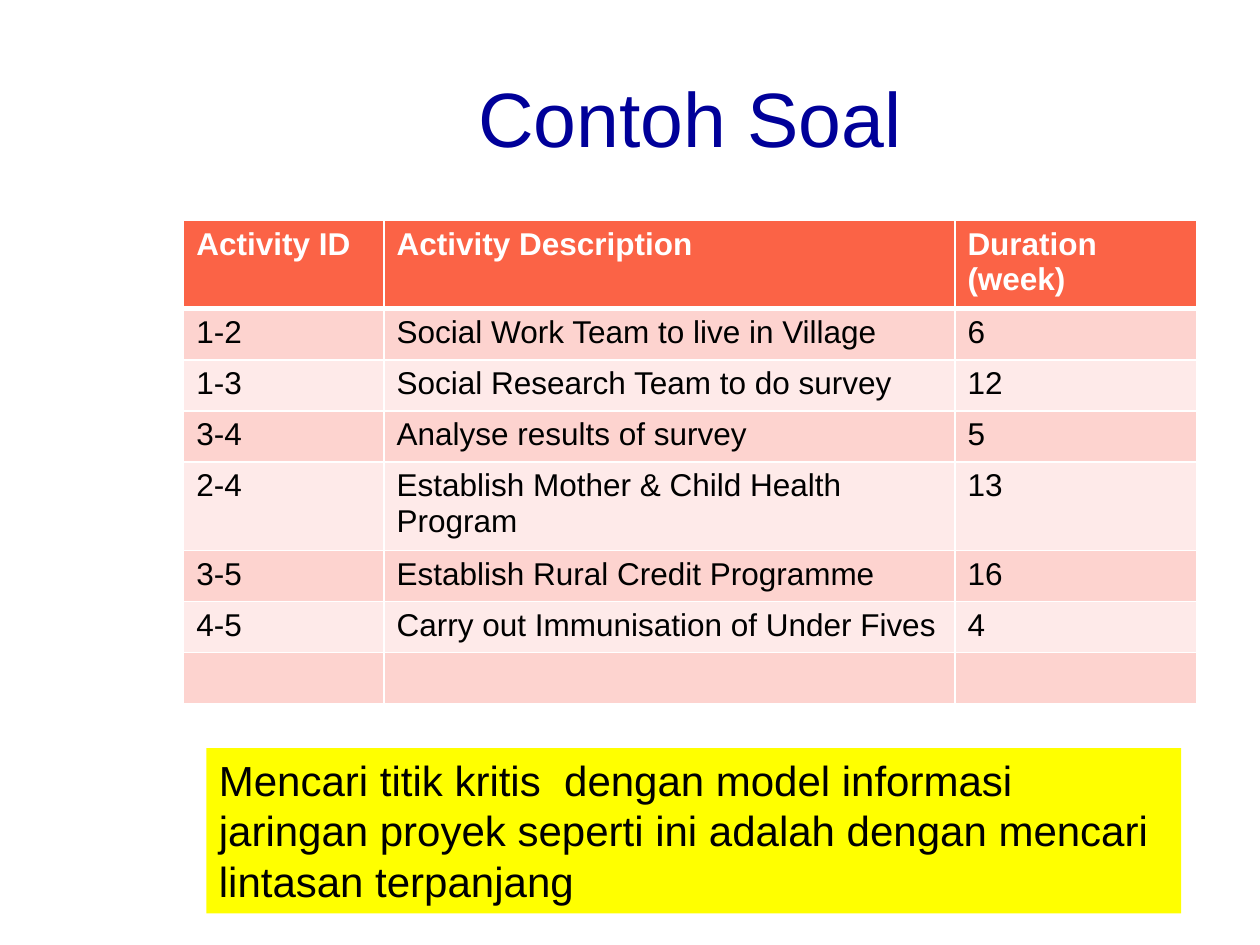
import pptx
import pptx.dml.color
import pptx.enum.shapes
import pptx.enum.text
import pptx.oxml
import pptx.oxml.ns
import pptx.util
from pptx.util import Pt

ACTIVITIES = [
    ("Activity ID", "Activity Description", "Duration (week)"),
    ("1-2", "Social Work Team to live in Village", "6"),
    ("1-3", "Social Research Team to do survey", "12"),
    ("3-4", "Analyse results of survey", "5"),
    ("2-4", "Establish Mother & Child Health Program", "13"),
    ("3-5", "Establish Rural Credit Programme", "16"),
    ("4-5", "Carry out Immunisation of Under Fives", "4"),
    ("", "", ""),
]
COLUMN_WIDTHS = (114.5, 326.2, 138.2)
ROW_HEIGHT = 29.2
HEADER_FILL = "FB6346"
BAND_FILLS = ("FEEAE9", "FDD3CF")


def rgb(hex_color):
    return pptx.dml.color.RGBColor.from_string(hex_color)


class SlideBuilder:
    font = "Arial"

    def __init__(self, slide):
        self.slide = slide

    def set_text(self, frame, text, size, color, bold=False, align=None):
        frame.text = text
        paragraph = frame.paragraphs[0]
        paragraph.alignment = align
        # An empty cell keeps its size through the paragraph font.
        for font in [run.font for run in paragraph.runs] or [paragraph.font]:
            font.name = self.font
            font.size = Pt(size)
            font.bold = bold
            font.color.rgb = rgb(color)

    def title(self, text, left, top, width, height):
        box = self.slide.shapes.add_textbox(Pt(left), Pt(top), Pt(width), Pt(height))
        frame = box.text_frame
        frame.word_wrap = True
        frame.vertical_anchor = pptx.enum.text.MSO_ANCHOR.MIDDLE
        self.set_text(frame, text, 44, "000099", align=pptx.enum.text.PP_ALIGN.CENTER)

    def note(self, text, left, top, width, height):
        panel = self.slide.shapes.add_shape(
            pptx.enum.shapes.MSO_SHAPE.RECTANGLE, Pt(left), Pt(top), Pt(width), Pt(height))
        panel.shadow.inherit = False
        panel.fill.solid()
        panel.fill.fore_color.rgb = rgb("FFFF00")
        panel.line.fill.background()
        frame = panel.text_frame
        frame.word_wrap = True
        frame.auto_size = pptx.enum.text.MSO_AUTO_SIZE.SHAPE_TO_FIT_TEXT
        frame.vertical_anchor = pptx.enum.text.MSO_ANCHOR.TOP
        self.set_text(frame, text, 24, "000000", align=pptx.enum.text.PP_ALIGN.LEFT)

    def borders(self, cell, top, bottom):
        """Draw white cell borders, with the given top and bottom widths in points."""
        properties = cell._tc.get_or_add_tcPr()
        for side, width in (("L", 1), ("R", 1), ("T", top), ("B", bottom)):
            properties.append(pptx.oxml.parse_xml(
                f'<a:ln{side} {pptx.oxml.ns.nsdecls("a")} w="{Pt(width)}">'
                f'<a:solidFill><a:srgbClr val="FFFFFF"/></a:solidFill></a:ln{side}>'))

    def table(self, rows, left, top, widths, row_height):
        table = self.slide.shapes.add_table(
            len(rows), len(widths), Pt(left), Pt(top),
            Pt(sum(widths)), Pt(row_height * len(rows))).table
        for column, width in zip(table.columns, widths):
            column.width = Pt(width)
        for r, values in enumerate(rows):
            header = r == 0
            table.rows[r].height = Pt(row_height)
            for c, value in enumerate(values):
                cell = table.cell(r, c)
                self.borders(cell, top=3 if r == 1 else 1, bottom=3 if header else 1)
                cell.fill.solid()
                cell.fill.fore_color.rgb = rgb(HEADER_FILL if header else BAND_FILLS[r % 2])
                self.set_text(cell.text_frame, value, 18,
                              "FFFFFF" if header else "000000", bold=header)


def main():
    deck = pptx.Presentation()
    deck.slide_width, deck.slide_height = Pt(720), Pt(540)
    builder = SlideBuilder(deck.slides.add_slide(deck.slide_layouts[6]))
    builder.title("Contoh Soal", 105, 21.6, 579, 90)
    builder.table(ACTIVITIES, 105, 126, COLUMN_WIDTHS, ROW_HEIGHT)
    builder.note("Mencari titik kritis  dengan model informasi jaringan proyek "
                 "seperti ini adalah dengan mencari lintasan terpanjang",
                 118, 427.5, 557, 94.5)
    deck.save("out.pptx")


if __name__ == "__main__":
    main()
